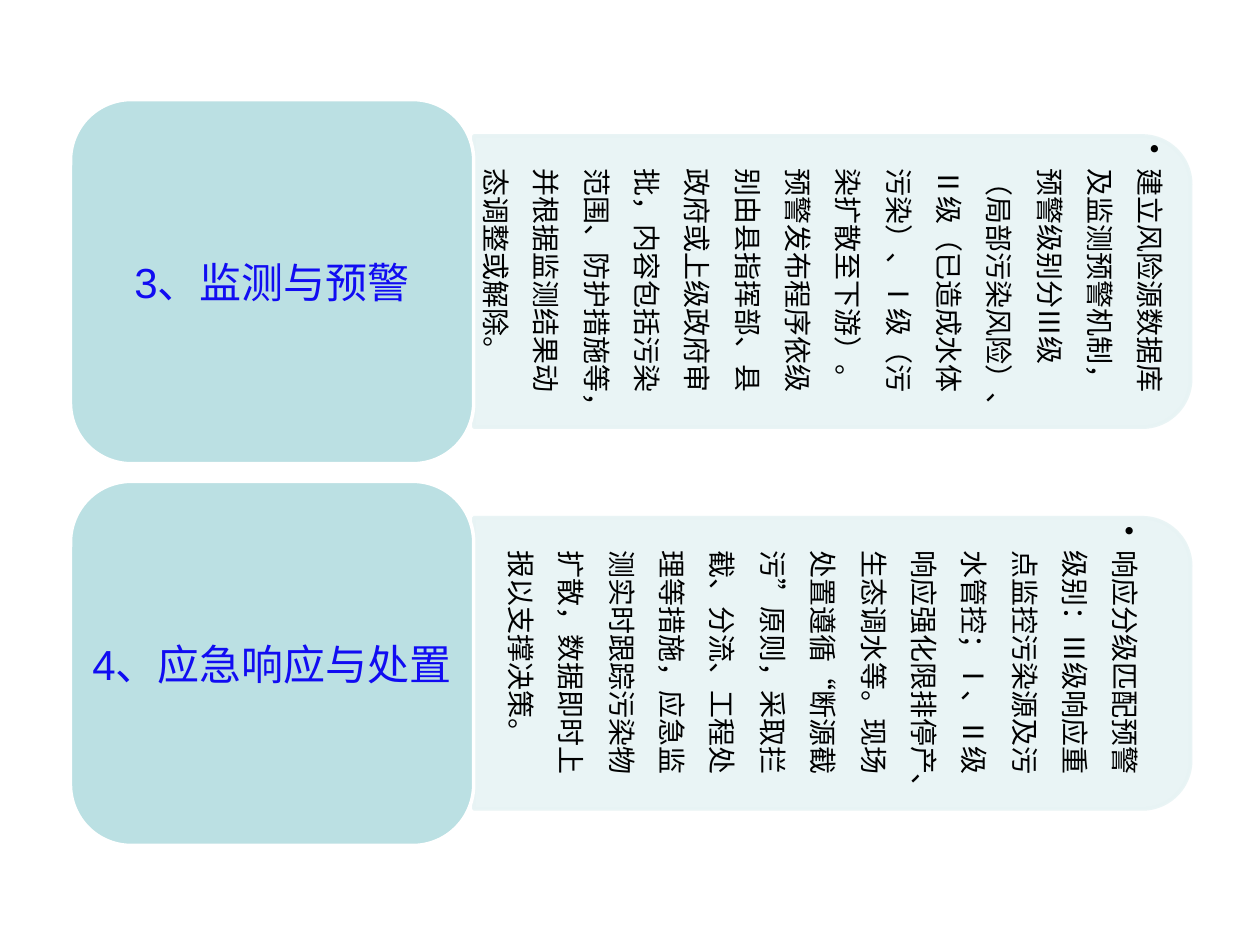
"""Build a slide of two emergency-plan sections, each a label with a sideways detail panel."""
from dataclasses import dataclass

from lxml.etree import SubElement
from pptx import Presentation
from pptx.dml.color import RGBColor
from pptx.enum.lang import MSO_LANGUAGE_ID
from pptx.enum.shapes import MSO_SHAPE
from pptx.enum.text import MSO_ANCHOR, PP_ALIGN
from pptx.oxml.ns import qn
from pptx.util import Inches, Pt

SECTIONS = [
    ("3、监测与预警",
     "建立风险源数据库及监测预警机制，预警级别分Ⅲ级（局部污染风险）、Ⅱ级（已造成水体污染）、"
     "Ⅰ级（污染扩散至下游）。预警发布程序依级别由县指挥部、县政府或上级政府审批，"
     "内容包括污染范围、防护措施等，并根据监测结果动态调整或解除。"),
    ("4、应急响应与处置",
     "响应分级匹配预警级别：Ⅲ级响应重点监控污染源及污水管控；Ⅰ、Ⅱ级响应强化限排停产、"
     "生态调水等。现场处置遵循“断源截污”原则，采取拦截、分流、工程处理等措施，"
     "应急监测实时跟踪污染物扩散，数据即时上报以支撑决策。"),
]


@dataclass(frozen=True)
class Theme:
    """Colours, font and type sizes."""
    label_fill: str = "BBE0E3"
    panel_fill: str = "E7F3F4"
    edge: str = "FFFFFF"
    label_text: str = "110CF2"
    body_text: str = "000000"
    font: str = "Arial"
    label_size: int = 24
    body_size: int = 16


THEME = Theme()
SLIDE_W, SLIDE_H = 10, 7.5
LEFT, LABEL_W, LABEL_H, GAP = 0.56, 3.2, 2.89, 0.14
PANEL_LENGTH, PANEL_DEPTH = 5.69, 0.8 * LABEL_H
TOP = (SLIDE_H - len(SECTIONS) * LABEL_H - (len(SECTIONS) - 1) * GAP) / 2


def add_box(s, kind, box, fill, edge, rotation=0, opacity=None):
    """Add a filled, outlined shape."""
    sp = s.shapes.add_shape(kind, *map(Inches, box))
    sp.rotation = rotation
    sp.shadow.inherit = False
    sp.fill.solid()
    sp.fill.fore_color.rgb = RGBColor.from_string(fill)
    sp.line.color.rgb = RGBColor.from_string(edge)
    sp.line.width = Pt(2)
    if opacity is not None:
        for color in sp._element.spPr.iter(qn("a:srgbClr")):
            SubElement(color, qn("a:alpha")).set("val", str(opacity * 1000))


def add_text(s, text, box, *, size, color, align, insets, rotation=0,
             spacing=1.0, bullet_indent=None):
    """Add a text box holding one formatted paragraph."""
    sp = s.shapes.add_textbox(*map(Inches, box))
    sp.rotation = rotation
    tf = sp.text_frame
    tf.word_wrap = True
    tf.vertical_anchor = MSO_ANCHOR.MIDDLE
    tf.margin_left = tf.margin_right = Inches(insets[0])
    tf.margin_top = tf.margin_bottom = Inches(insets[1])
    p = tf.paragraphs[0]
    p.alignment = align
    p.line_spacing = spacing
    if bullet_indent:
        p.level = 1
        pPr = p._p.get_or_add_pPr()
        pPr.set("marL", str(Inches(bullet_indent)))
        pPr.set("indent", str(-Inches(bullet_indent)))
        SubElement(pPr, qn("a:buChar")).set("char", "•")
    r = p.add_run()
    r.text = text
    r.font.name = THEME.font
    r.font.size = Pt(size)
    r.font.color.rgb = RGBColor.from_string(color)
    r.font.language_id = MSO_LANGUAGE_ID.SIMPLIFIED_CHINESE


def add_section(s, top, label, detail):
    """Add a detail panel turned a quarter clockwise and the label beside it."""
    center_x = LEFT + LABEL_W + PANEL_LENGTH / 2
    center_y = top + LABEL_H / 2
    panel = (center_x - PANEL_DEPTH / 2, center_y - PANEL_LENGTH / 2,
             PANEL_DEPTH, PANEL_LENGTH)
    tile = (LEFT, top, LABEL_W, LABEL_H)
    add_box(s, MSO_SHAPE.ROUND_2_SAME_RECTANGLE, panel,
            THEME.panel_fill, THEME.panel_fill, rotation=90, opacity=90)
    add_text(s, detail, panel, size=THEME.body_size, color=THEME.body_text,
             align=PP_ALIGN.LEFT, insets=(0.07, 0.03), rotation=90,
             spacing=1.5, bullet_indent=0.19)
    add_box(s, MSO_SHAPE.ROUNDED_RECTANGLE, tile, THEME.label_fill, THEME.edge)
    add_text(s, label, tile, size=THEME.label_size, color=THEME.label_text,
             align=PP_ALIGN.CENTER, insets=(0.1, 0.05))


def main():
    """Create and save the presentation."""
    prs = Presentation()
    prs.slide_width, prs.slide_height = Inches(SLIDE_W), Inches(SLIDE_H)
    s = prs.slides.add_slide(prs.slide_layouts[6])
    for row, (label, detail) in enumerate(SECTIONS):
        add_section(s, TOP + row * (LABEL_H + GAP), label, detail)
    prs.save("out.pptx")


if __name__ == "__main__":
    main()
